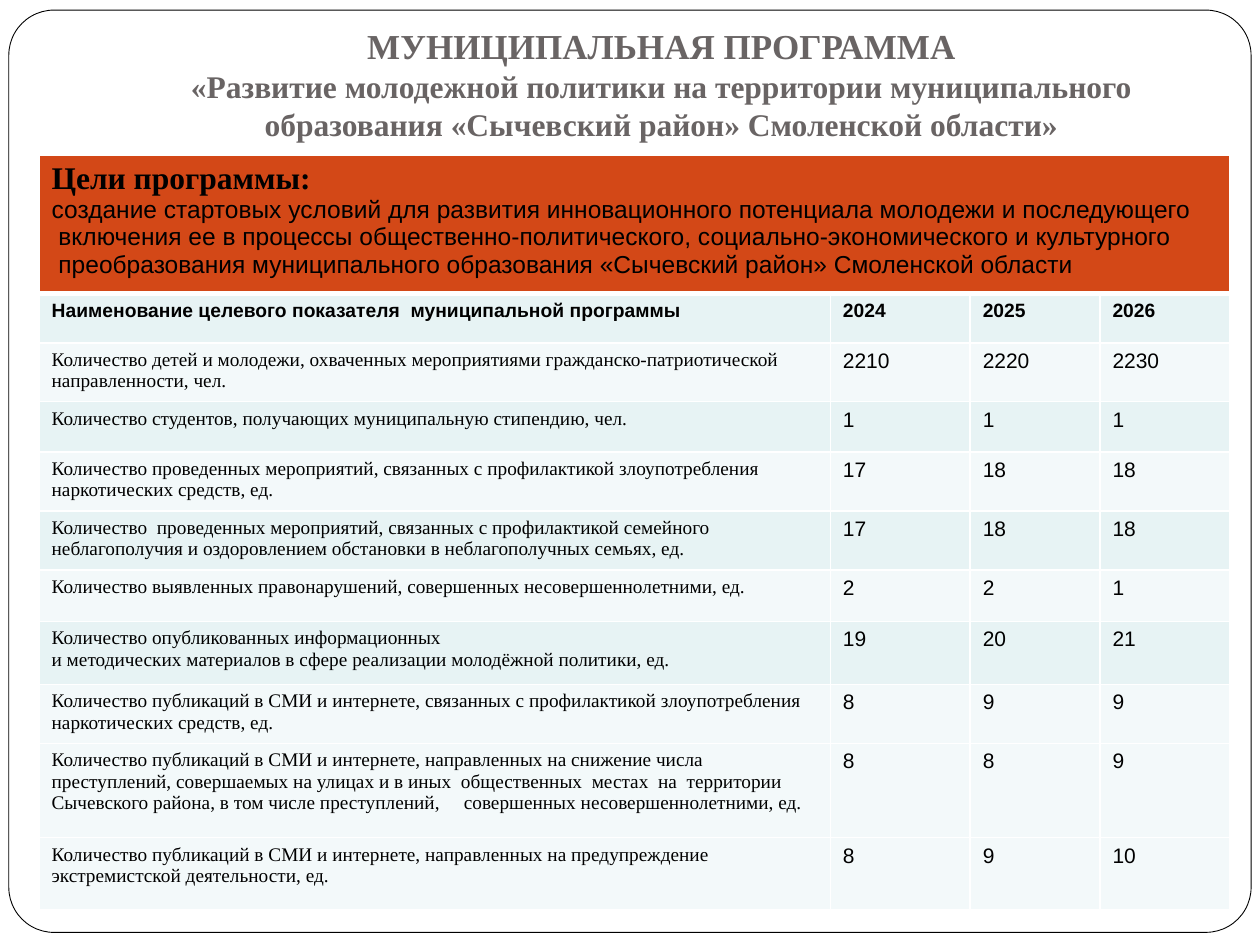
from lxml import etree
from pptx import Presentation
from pptx.dml.color import RGBColor
from pptx.enum.shapes import MSO_SHAPE
from pptx.enum.text import MSO_ANCHOR, PP_ALIGN
from pptx.oxml.ns import qn
from pptx.util import Inches, Pt

ROUNDED = MSO_SHAPE.ROUNDED_RECTANGLE
BOTTOM, CENTER = MSO_ANCHOR.BOTTOM, PP_ALIGN.CENTER
SERIF, SANS = "Times New Roman", "Arial"
COLORS = {
    "paper": "FFFFFF", "ink": "000000", "title": "696464",
    "goal": "D34817", "band": "E7F3F4", "pale": "F3F9FA",
}
SLIDE_W, SLIDE_H = Inches(10), Inches(7.5)

# Regions as (left, top, width, height), in inches
FRAME_BOX = (0.07, 0.08, 9.86, 7.32)
TITLE_BOX = (1, 0.13, 8.5, 1.1)
TABLE_BOX = (0.31, 1.23, 9.45, 5.9)

# Relative column widths and row heights of the table
COLUMNS = (6.28, 1.11, 1.03, 1.03)
ROWS = (1.1, 0.39, 0.45, 0.4, 0.44, 0.44, 0.41, 0.5, 0.45, 0.75, 0.57)

TITLE = (
    "МУНИЦИПАЛЬНАЯ ПРОГРАММА\v"
    "«Развитие молодежной политики на территории муниципального "
    "образования «Сычевский район» Смоленской области»"
)
GOAL = (
    "Цели программы:\n"
    "создание стартовых условий для развития инновационного потенциала молодежи и последующего\n"
    " включения ее в процессы общественно-политического, социально-экономического и культурного\n"
    " преобразования муниципального образования «Сычевский район» Смоленской области"
)
HEADINGS = ("Наименование целевого показателя  муниципальной программы", "2024", "2025", "2026")
INDICATORS = (
    ("band", "Количество детей и молодежи, охваченных мероприятиями "
     "гражданско-патриотической направленности, чел.", 2210, 2220, 2230),
    ("band", "Количество студентов, получающих муниципальную стипендию, чел.", 1, 1, 1),
    ("pale", "Количество проведенных мероприятий, связанных с профилактикой "
     "злоупотребления наркотических средств, ед.", 17, 18, 18),
    ("band", "Количество  проведенных мероприятий, связанных с профилактикой семейного "
     "неблагополучия и оздоровлением обстановки в неблагополучных семьях, ед.", 17, 18, 18),
    ("pale", "Количество выявленных правонарушений, совершенных несовершеннолетними, ед.", 2, 2, 1),
    ("band", "Количество опубликованных информационных\v"
     "и методических материалов в сфере реализации молодёжной политики, ед.", 19, 20, 21),
    ("pale", "Количество публикаций в СМИ и интернете, связанных с профилактикой "
     "злоупотребления наркотических средств, ед.", 8, 9, 9),
    ("pale", "Количество публикаций в СМИ и интернете, направленных на снижение числа "
     "преступлений, совершаемых на улицах и в иных  общественных  местах  на  территории "
     "Сычевского района, в том числе преступлений,     совершенных несовершеннолетними, ед.",
     8, 8, 9),
    ("pale", "Количество публикаций в СМИ и интернете, направленных на предупреждение "
     "экстремистской деятельности, ед.", 8, 9, 10),
)
INDICATORS = (("pale", *INDICATORS[0][1:]), *INDICATORS[1:])


def rgb(name):
    return RGBColor.from_string(COLORS[name])


def style(run, size, font, color="ink", bold=False):
    run.font.size, run.font.name, run.font.bold = Pt(size), font, bold
    run.font.color.rgb = rgb(color)


def add_frame(slide, box):
    frame = slide.shapes.add_shape(ROUNDED, *map(Inches, box))
    frame.adjustments[0] = 0.049
    frame.shadow.inherit = False
    frame.fill.solid()
    frame.fill.fore_color.rgb = rgb("paper")
    frame.line.color.rgb = rgb("ink")
    frame.line.width = Pt(0.5)


def add_title(slide, box):
    text_frame = slide.shapes.add_textbox(*map(Inches, box)).text_frame
    text_frame.word_wrap = True
    text_frame.vertical_anchor = BOTTOM
    text_frame.margin_bottom = Inches(0.1)
    heading = text_frame.paragraphs[0]
    heading.text = TITLE
    heading.alignment = CENTER
    for run, size in zip(heading.runs, (20, 18)):
        style(run, size, SERIF, "title", True)


def set_borders(cell, top=1, bottom=1):
    properties = cell._tc.get_or_add_tcPr()
    for side, width in (("L", 1), ("R", 1), ("T", top), ("B", bottom)):
        border = etree.SubElement(properties, qn(f"a:ln{side}"), w=str(Pt(width)))
        fill = etree.SubElement(border, qn("a:solidFill"))
        etree.SubElement(fill, qn("a:srgbClr"), val=COLORS["paper"])


def fill_cell(cell, text, fill, size, font, bold=False, **borders):
    set_borders(cell, **borders)
    cell.fill.solid()
    cell.fill.fore_color.rgb = rgb(fill)
    cell.text_frame.text = text
    for paragraph in cell.text_frame.paragraphs:
        for run in paragraph.runs:
            style(run, size, font, bold=bold)


def add_indicator_table(slide, box):
    left, top, width, height = map(Inches, box)
    table = slide.shapes.add_table(len(ROWS), len(COLUMNS), left, top, width, height).table
    table.first_row = table.horz_banding = False
    for column, share in zip(table.columns, COLUMNS):
        column.width = int(width * share / sum(COLUMNS))
    for row, share in zip(table.rows, ROWS):
        row.height = int(height * share / sum(ROWS))

    # Programme goal across all columns
    for cell in table.rows[0].cells:
        fill_cell(cell, "", "goal", 14, SANS, bottom=3)
    goal = table.cell(0, 0)
    goal.merge(table.cell(0, len(COLUMNS) - 1))
    goal.text_frame.text = GOAL
    goal_heading, *goal_lines = goal.text_frame.paragraphs
    style(goal_heading.runs[0], 18, SERIF, bold=True)
    for line in goal_lines:
        style(line.runs[0], 14, SANS)

    # Column headings
    for cell, heading in zip(table.rows[1].cells, HEADINGS):
        fill_cell(cell, heading, "band", 11, SANS, True, top=3)

    # Indicators with their yearly targets
    for row_number, (fill, indicator, *targets) in enumerate(INDICATORS, start=2):
        fill_cell(table.cell(row_number, 0), indicator, fill, 11, SERIF)
        for year, target in enumerate(targets, start=1):
            fill_cell(table.cell(row_number, year), str(target), fill, 12, SANS)


def main():
    deck = Presentation()
    deck.slide_width, deck.slide_height = SLIDE_W, SLIDE_H
    slide = deck.slides.add_slide(deck.slide_layouts[6])
    add_frame(slide, FRAME_BOX)
    add_title(slide, TITLE_BOX)
    add_indicator_table(slide, TABLE_BOX)
    deck.save("out.pptx")


if __name__ == "__main__":
    main()
